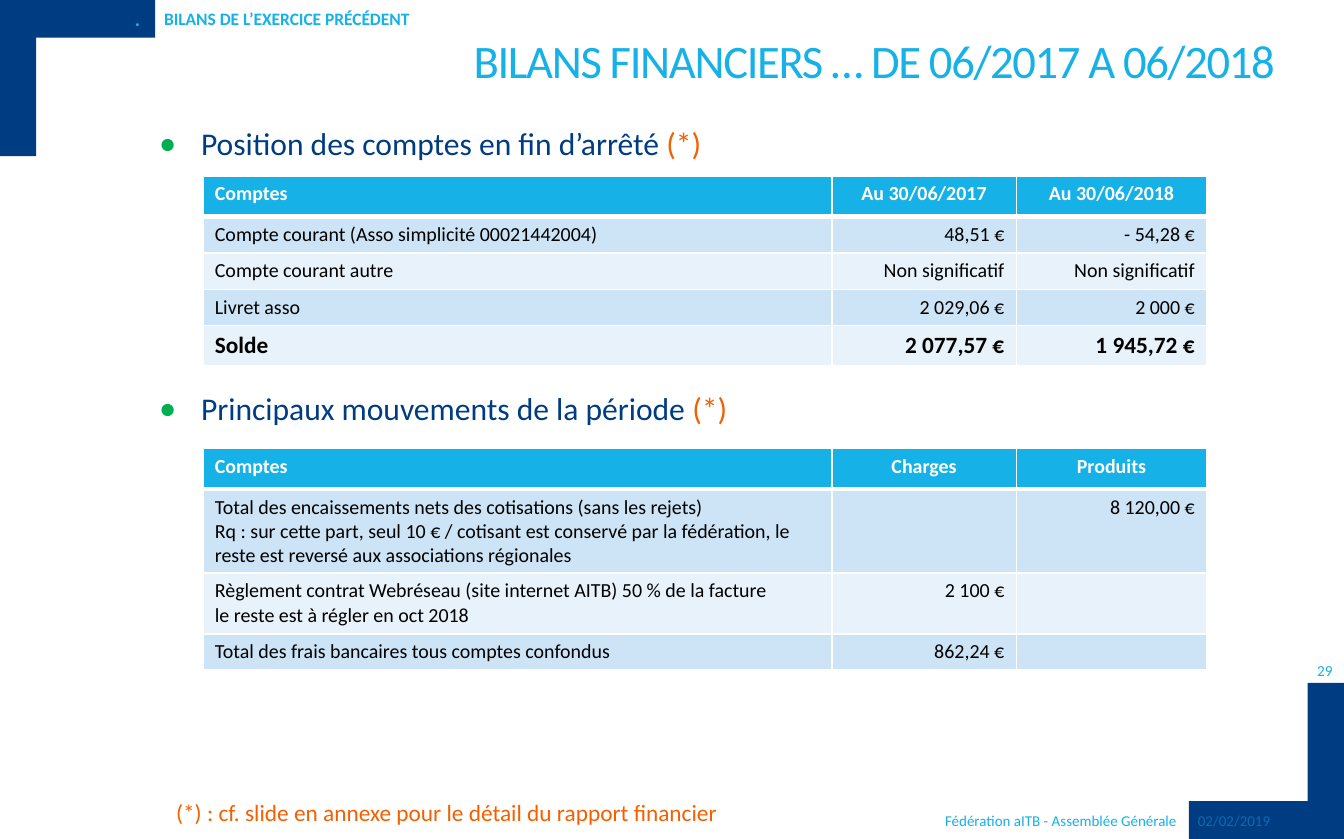
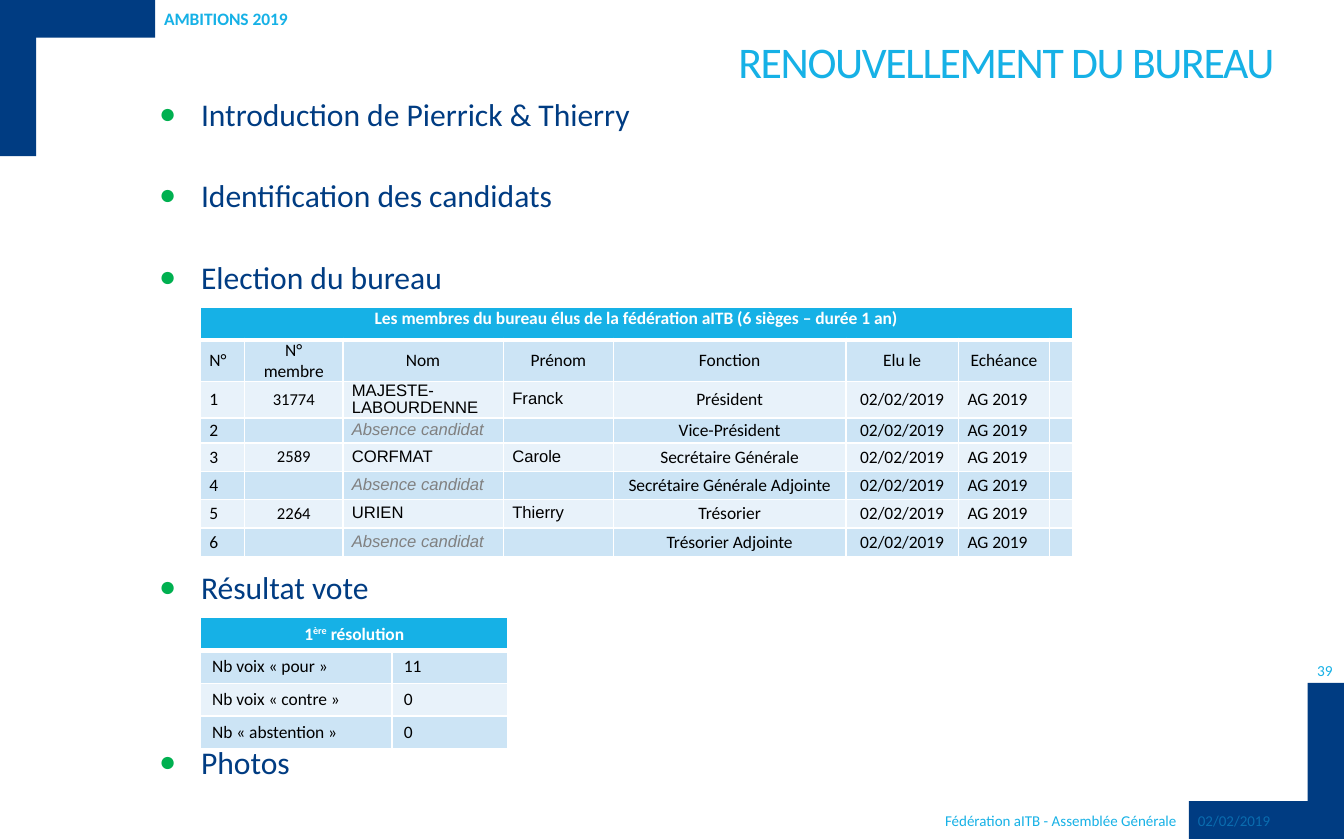
from lxml.etree import SubElement
from pptx import Presentation
from pptx.dml.color import RGBColor
from pptx.enum.shapes import MSO_SHAPE
from pptx.enum.text import MSO_ANCHOR, PP_ALIGN
from pptx.oxml import parse_xml
from pptx.oxml.ns import nsdecls, qn
from pptx.util import Cm, Emu, Inches, Pt

NAVY, SKY, ORANGE, GREEN = "003C82", "16B1E6", "F46000", "00B050"
DATE_BLUE, BLACK, WHITE, GREY = "0A6CAF", "000000", "FFFFFF", "808080"
BANDS = ("CCE4F5", "E8F2FA")
ALIGN = {"l": PP_ALIGN.LEFT, "c": PP_ALIGN.CENTER, "r": PP_ALIGN.RIGHT}
INSET = (0.89, 0.71, 0.89, 0.71)
ABSENT = "Absence candidat"


def rgb(value):
    return RGBColor.from_string(value)


def write(p, text, size=12, color=BLACK, font="Calibri", bold=False, italic=False,
          align="l", leading=None, spacing=None, raised=None):
    """Append one formatted run to a paragraph; empty text only sizes the line."""
    p.alignment = ALIGN[align]
    if leading:
        p.line_spacing = leading
    if not text:
        SubElement(p._p, qn("a:endParaRPr"), sz=str(int(size * 100)))
        return
    r = p.add_run()
    r.text = text
    f = r.font
    f.size, f.name, f.bold, f.italic = Pt(size), font, bold, italic
    f.color.rgb = rgb(color)
    for key, value in (("spc", spacing), ("baseline", raised)):
        if value:
            r._r.get_or_add_rPr().set(key, str(value))


def fill_frame(tf, content, **fmt):
    """Write a string (one paragraph a line) or a list of (text, overrides) runs."""
    if isinstance(content, str):
        paragraphs = [[(line, {})] for line in content.split("\n")]
    else:
        paragraphs = [content]
    for i, runs in enumerate(paragraphs):
        p = tf.add_paragraph() if i else tf.paragraphs[0]
        for text, extra in runs:
            write(p, text, **{**fmt, **extra})


def add_bullet(p):
    pPr = p._p.get_or_add_pPr()
    pPr.set("marL", str(Inches(0.35)))
    pPr.set("indent", str(-Inches(0.35)))
    for xml in (f'<a:buClr {nsdecls("a")}><a:srgbClr val="{GREEN}"/></a:buClr>',
                f'<a:buSzPct {nsdecls("a")} val="90000"/>',
                f'<a:buFont {nsdecls("a")} typeface="Arial"/>',
                f'<a:buChar {nsdecls("a")} char="●"/>'):
        pPr.append(parse_xml(xml))


def add_borders(cell, bottom):
    tcPr = cell._tc.get_or_add_tcPr()
    for i, (side, width) in enumerate(zip("LRTB", (1, 1, 1, bottom))):
        tcPr.insert(i, parse_xml(
            f'<a:ln{side} {nsdecls("a")} w="{Pt(width)}"><a:solidFill>'
            f'<a:srgbClr val="{WHITE}"/></a:solidFill></a:ln{side}>'))


class Deck:
    """Shared style and the current slide; lengths are percent of the slide's size."""

    def __init__(self):
        self.prs = Presentation()
        self.prs.slide_width, self.prs.slide_height = Cm(28.5), Cm(17.8)
        self.s = None

    def x(self, share):
        return Emu(round(self.prs.slide_width * share / 100))

    def y(self, share):
        return Emu(round(self.prs.slide_height * share / 100))

    def box(self, x, y, w, h):
        return self.x(x), self.y(y), self.x(w), self.y(h)

    def set_inset(self, target, inset):
        left, top, right, bottom = inset
        target.margin_left, target.margin_right = self.x(left), self.x(right)
        target.margin_top, target.margin_bottom = self.y(top), self.y(bottom)

    def slide(self, section, title, number, title_size):
        self.s = self.prs.slides.add_slide(self.prs.slide_layouts[6])
        for w, h in ((11.54, 4.5), (2.7, 18.6)):
            self.bar(0, 0, w, h)
            self.bar(100 - w, 100 - h, w, h)
        self.text(6.77, 4.95, 88.86, 11.98, title, inset=(1.78, 0.71, 0.8, 0),
                  size=title_size, color=SKY, align="r", leading=Pt(24), spacing=-80)
        self.text(12.21, 0.38, 34.94, 3.71, section, inset=(0, 0.71, 0.89, 0.71),
                  anchor=MSO_ANCHOR.MIDDLE, size=10.5, color=SKY, bold=True)
        self.text(20.5, 96, 67.91, 3.28, "Fédération aITB - Assemblée Générale",
                  size=9, color=SKY, align="r")
        self.text(88.24, 96, 11.68, 3.28, "02/02/2019", size=9, color=DATE_BLUE)
        self.text(97.24, 78.3, 2.67, 3.14, number, inset=(0, 0, 0, 0),
                  anchor=MSO_ANCHOR.MIDDLE, size=9.2, color=SKY, align="c")

    def bar(self, x, y, w, h):
        sp = self.s.shapes.add_shape(MSO_SHAPE.RECTANGLE, *self.box(x, y, w, h))
        sp.shadow.inherit = False
        sp.fill.solid()
        sp.fill.fore_color.rgb = rgb(NAVY)
        sp.line.fill.background()

    def text(self, x, y, w, h, content, inset=INSET, anchor=MSO_ANCHOR.TOP, **fmt):
        tf = self.s.shapes.add_textbox(*self.box(x, y, w, h)).text_frame
        tf.word_wrap = True
        tf.vertical_anchor = anchor
        self.set_inset(tf, inset)
        fill_frame(tf, content, **fmt)

    def bullets(self, y, h, items):
        """Write (space before in points, runs) items as one bulleted list."""
        tf = self.s.shapes.add_textbox(*self.box(10.96, y, 84.67, h)).text_frame
        tf.word_wrap = True
        for i, (gap, runs) in enumerate(items):
            p = tf.add_paragraph() if i else tf.paragraphs[0]
            add_bullet(p)
            if gap:
                p.space_before = Pt(gap)
            for text, color in runs:
                write(p, text, size=19, color=color)

    def table(self, x, y, cols, heights, rows, aligns, head_aligns, size=12,
              inset=INSET, anchor=MSO_ANCHOR.TOP, style=lambda r, c, text: {}):
        """Draw a banded table; a header row with one entry spans every column."""
        frame = self.s.shapes.add_table(len(rows), len(cols),
                                        *self.box(x, y, sum(cols), sum(heights)))
        table = frame.table
        for column, share in zip(table.columns, cols):
            column.width = self.x(share)
        for row, share in zip(table.rows, heights):
            row.height = self.y(share)
        if len(rows[0]) == 1:
            table.cell(0, 0).merge(table.cell(0, len(cols) - 1))
        for r, row in enumerate(rows):
            head = r == 0
            for c in range(len(cols)):
                cell = table.cell(r, c)
                cell.fill.solid()
                cell.fill.fore_color.rgb = rgb(SKY if head else BANDS[(r - 1) % 2])
                add_borders(cell, 3 if head else 1)
                self.set_inset(cell, inset)
                cell.vertical_anchor = MSO_ANCHOR.TOP if head else anchor
                content = row[c] if c < len(row) else ""
                fmt = {"size": size, "align": (head_aligns if head else aligns)[c],
                       "color": WHITE if head else BLACK, "bold": head}
                fill_frame(cell.text_frame, content, **{**fmt, **style(r, c, content)})


def finances(deck):
    deck.slide("BILANS DE L’EXERCICE PRÉCÉDENT",
               "BILANS FINANCIERS … DE 06/2017 A 06/2018", "29", 28)
    deck.text(8.02, 0.38, 3.3, 3.71, ".", anchor=MSO_ANCHOR.MIDDLE,
              size=12, color=SKY, bold=True, align="r")
    star = ("(*)", ORANGE)
    deck.bullets(14.12, 78.6, [
        (0, [("Position des comptes en fin d’arrêté ", NAVY), star]),
        (136.6, [("Principaux mouvements de la période ", NAVY), star])])
    layout = {"x": 15.1, "cols": (46.79, 13.73, 14.17),
              "aligns": "lrr", "head_aligns": "lcc"}
    deck.table(
        y=20.97, heights=(4.85, 4.33, 4.33, 4.33, 4.85), **layout,
        style=lambda r, c, text: {"size": 14, "bold": True} if r == 4 else {},
        rows=[("Comptes", "Au 30/06/2017", "Au 30/06/2018"),
              ("Compte courant (Asso simplicité 00021442004)", "48,51 €", "- 54,28 €"),
              ("Compte courant autre", "Non significatif", "Non significatif"),
              ("Livret asso", "2 029,06 €", "2 000 €"),
              ("Solde", "2 077,57 €", "1 945,72 €")])
    deck.table(
        y=53.45, heights=(4.85, 9.99, 7.28, 4.28), **layout,
        rows=[("Comptes", "Charges", "Produits"),
              ("Total des encaissements nets des cotisations (sans les rejets)\n"
               "Rq : sur cette part, seul 10 € / cotisant est conservé par la fédération, "
               "le reste est reversé aux associations régionales", "", "8 120,00 €"),
              ("Règlement contrat Webréseau (site internet AITB) 50 % de la facture\n"
               "le reste est à régler en oct 2018", "2 100 €", ""),
              ("Total des frais bancaires tous comptes confondus", "862,24 €", "")])
    deck.text(12.21, 94.44, 46, 4.85,
              "(*) : cf. slide en annexe pour le détail du rapport financier",
              size=14, color=ORANGE)


def member_style(r, c, text):
    if r == 1:
        return {"align": "c" if c else "l"}
    if r > 1 and c == 1:
        return {"size": 10}
    if r > 1 and c in (2, 3):
        absent = {"color": GREY, "italic": True} if text == ABSENT else {}
        return {"size": 10, "font": "Arial", "leading": 0.9, **absent}
    return {}


def board(deck):
    deck.slide("AMBITIONS 2019", "RENOUVELLEMENT DU BUREAU", "39", 26.3)
    deck.bullets(10.56, 82, [(gap, [(text, NAVY)]) for gap, text in (
        (0, "Introduction de Pierrick & Thierry"), (26.4, "Identification des candidats"),
        (26.4, "Election du bureau"), (163.6, "Résultat vote"), (82.6, "Photos"))])
    members = [("31774", "MAJESTE-LABOURDENNE", "Franck", "Président"),
               ("", ABSENT, "", "Vice-Président"),
               ("2589", "CORFMAT", "Carole", "Secrétaire Générale"),
               ("", ABSENT, "", "Secrétaire Générale Adjointe"),
               ("2264", "URIEN", "Thierry", "Trésorier"),
               ("", ABSENT, "", "Trésorier Adjointe")]
    deck.table(
        14.9, 36.66, (3.3, 7.31, 11.94, 8.2, 17.29, 8.38, 6.77, 1.16),
        (3.85, 5, 4.28, 3) + (3.38,) * 4,
        [("Les membres du bureau élus de la fédération aITB (6 sièges – durée 1 an)",),
         ("N°", "N° membre", "Nom", "Prénom", "Fonction", "Elu le", "Echéance"),
         *[(str(n), *member, "02/02/2019", "AG 2019")
           for n, member in enumerate(members, 1)]],
        "lcllccll", "c" * 8, size=10.5, inset=(0.68, 0, 0.68, 0),
        anchor=MSO_ANCHOR.MIDDLE, style=member_style)
    deck.table(
        14.9, 73.61, (14.26, 8.65), (3.92,) * 4,
        [([("1", {}), ("ère", {"raised": 30000}), (" résolution", {})],),
         ("Nb voix « pour »", "11"), ("Nb voix « contre »", "0"),
         ("Nb « abstention »", "0")],
        "ll", "cc", size=10.5)


def main():
    deck = Deck()
    finances(deck)
    board(deck)
    deck.prs.save("out.pptx")


if __name__ == "__main__":
    main()
